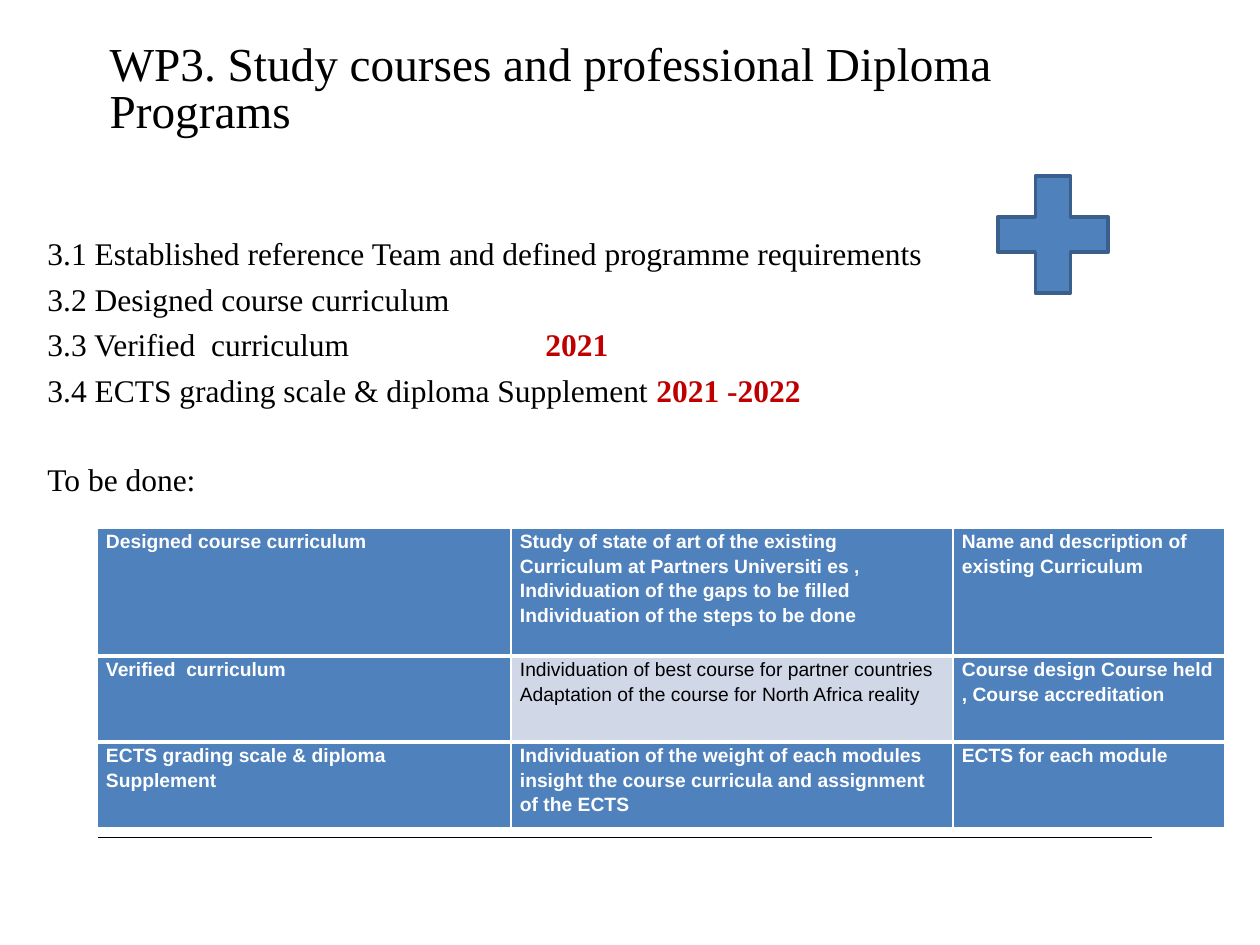
from lxml.etree import SubElement
from pptx import Presentation
from pptx.dml.color import RGBColor
from pptx.enum.shapes import MSO_CONNECTOR, MSO_SHAPE
from pptx.enum.text import MSO_ANCHOR, PP_ALIGN
from pptx.oxml import parse_xml
from pptx.oxml.ns import nsdecls, qn
from pptx.util import Pt

BLACK = RGBColor(0x00, 0x00, 0x00)
WHITE = RGBColor(0xFF, 0xFF, 0xFF)
RED = RGBColor(0xC0, 0x00, 0x00)
BLUE = RGBColor(0x4F, 0x81, 0xBD)
DARK_BLUE = RGBColor(0x3A, 0x5F, 0x8C)
PALE_BLUE = RGBColor(0xD0, 0xD8, 0xE8)
SERIF, SANS = "Times New Roman", "Arial"

TITLE = "WP3. Study courses and professional Diploma Programs"
TASKS = [
    ("3.1 Established reference Team and defined programme requirements", ""),
    ("3.2 Designed course curriculum", ""),
    ("3.3 Verified  curriculum\t", "2021"),
    ("3.4 ECTS grading scale & diploma Supplement ", "2021 -2022"),
    ("To be done:", ""),
]
PLAN = [
    ("Designed course curriculum",
     "Study of state of art of the existing Curriculum at Partners Universiti es , "
     "Individuation of the gaps to be filled Individuation of the steps to be done",
     "Name and description of existing Curriculum"),
    ("Verified  curriculum",
     "Individuation of best course for partner countries "
     "Adaptation of the course for North Africa reality",
     "Course design Course held , Course accreditation"),
    ("ECTS grading scale & diploma Supplement",
     "Individuation of the weight of each modules insight the course curricula "
     "and assignment of the ECTS",
     "ECTS for each module"),
]
COLUMN_WIDTHS = [414, 442, 272]
ROW_HEIGHTS = [128, 86, 86]
PALE_CELL = (1, 1)
YEAR_TAB = 498


def px(length):
    return round(length * 914400 / 126)


def area(*lengths):
    return [px(length) for length in lengths]


def add_span(para, text, font, size, color, bold=False):
    span = para.add_run()
    span.text = text
    span.font.name = font
    span.font.size = Pt(size)
    span.font.color.rgb = color
    span.font.bold = bold


def add_title(page):
    title = page.shapes.title
    title.left, title.top, title.width, title.height = area(97, 37, 1068, 118)
    title.text_frame.vertical_anchor = MSO_ANCHOR.TOP
    title.text_frame.word_wrap = True
    para = title.text_frame.paragraphs[0]
    para.alignment = PP_ALIGN.LEFT
    para.line_spacing = Pt(27)
    add_span(para, TITLE, SERIF, 27, BLACK)


def add_tasks(page):
    frame = page.shapes.add_textbox(*area(35, 228, 1116, 290)).text_frame
    frame.word_wrap = True
    for index, (task, years) in enumerate(TASKS):
        para = frame.paragraphs[0] if index == 0 else frame.add_paragraph()
        if "\t" in task:
            tabs = SubElement(para._p.get_or_add_pPr(), qn("a:tabLst"))
            SubElement(tabs, qn("a:tab"), pos=str(px(YEAR_TAB)), algn="l")
        if index:
            para.space_before = Pt(29.6 if index == len(TASKS) - 1 else 4.4)
        add_span(para, task, SERIF, 18, BLACK)
        if years:
            add_span(para, years, SERIF, 18, RED, True)


def add_borders(cell, row):
    properties = cell._tc.get_or_add_tcPr()
    widths = {"L": 1, "R": 1, "T": 3 if row else 1,
              "B": 3 if row < len(PLAN) - 1 else 1}
    for side, width in widths.items():
        properties.append(parse_xml(
            f'<a:ln{side} {nsdecls("a")} w="{Pt(width)}"><a:solidFill>'
            f'<a:srgbClr val="{WHITE}"/></a:solidFill></a:ln{side}>'))


def add_plan(page):
    table = page.shapes.add_table(
        len(PLAN), len(COLUMN_WIDTHS),
        *area(97, 528, sum(COLUMN_WIDTHS), sum(ROW_HEIGHTS))).table
    table.horz_banding = False
    table.first_row = False
    for column, width in zip(table.columns, COLUMN_WIDTHS):
        column.width = px(width)
    for row, (height, texts) in enumerate(zip(ROW_HEIGHTS, PLAN)):
        table.rows[row].height = px(height)
        for column, text in enumerate(texts):
            cell = table.cell(row, column)
            pale = (row, column) == PALE_CELL
            add_borders(cell, row)
            cell.fill.solid()
            cell.fill.fore_color.rgb = PALE_BLUE if pale else BLUE
            cell.margin_left = cell.margin_right = px(9)
            cell.margin_top = cell.margin_bottom = 0
            para = cell.text_frame.paragraphs[0]
            para.line_spacing = 1.15
            add_span(para, text, SANS, 11, BLACK if pale else WHITE, not pale)


def add_plus(page):
    plus = page.shapes.add_shape(MSO_SHAPE.MATH_PLUS, *area(978, 155, 150, 159))
    plus.shadow.inherit = False
    plus.fill.solid()
    plus.fill.fore_color.rgb = BLUE
    plus.line.color.rgb = DARK_BLUE
    plus.line.width = Pt(2)


def add_footer_line(page):
    line = page.shapes.add_connector(
        MSO_CONNECTOR.STRAIGHT, *area(98, 837, 1152, 837))
    line.line.color.rgb = BLACK
    line.line.width = Pt(0.5)
    SubElement(line._element.spPr, qn("a:effectLst"))


def main():
    deck = Presentation()
    deck.slide_width, deck.slide_height = area(1260, 945)
    page = deck.slides.add_slide(deck.slide_layouts[5])
    add_footer_line(page)
    add_title(page)
    add_tasks(page)
    add_plan(page)
    add_plus(page)
    deck.save("out.pptx")


if __name__ == "__main__":
    main()
